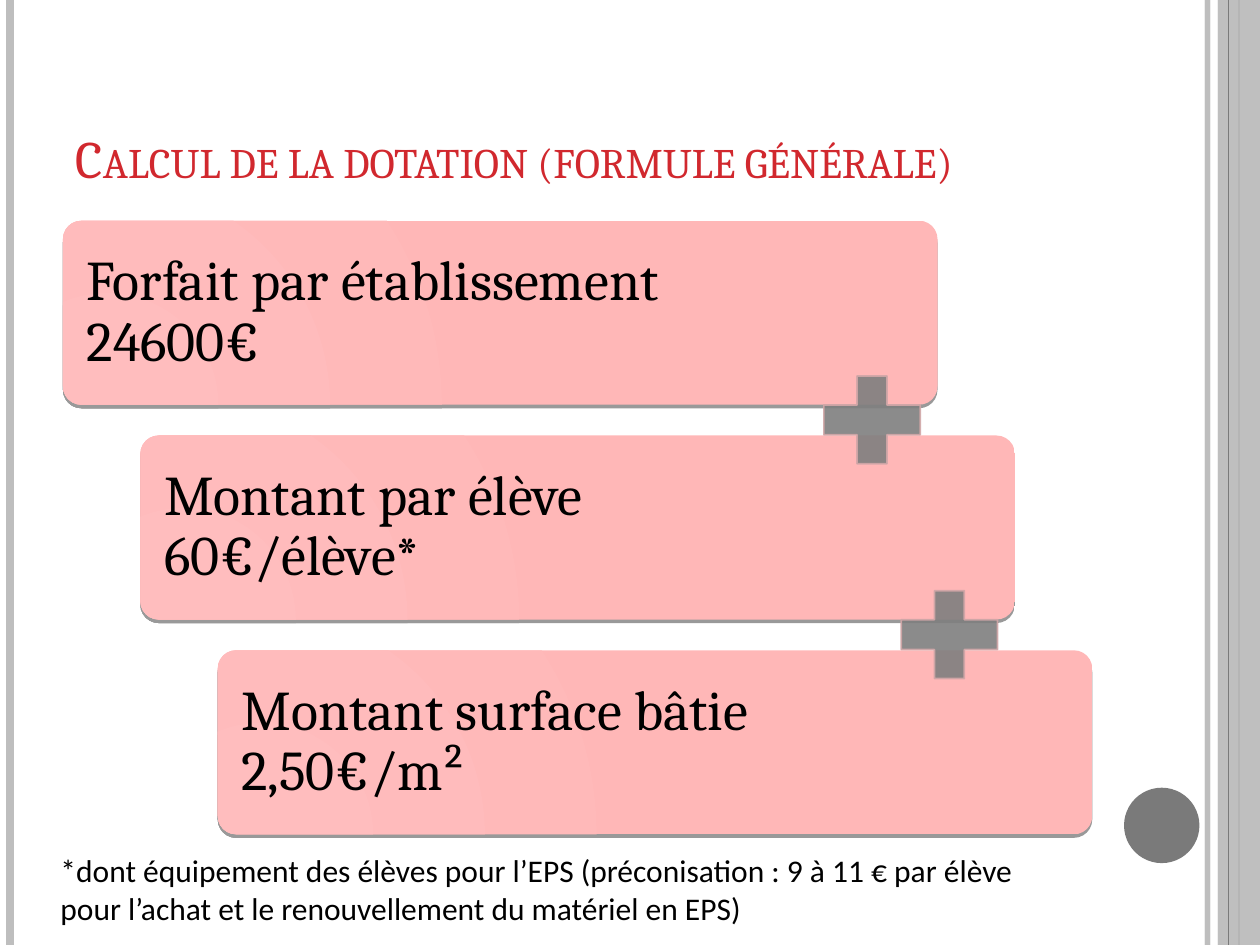
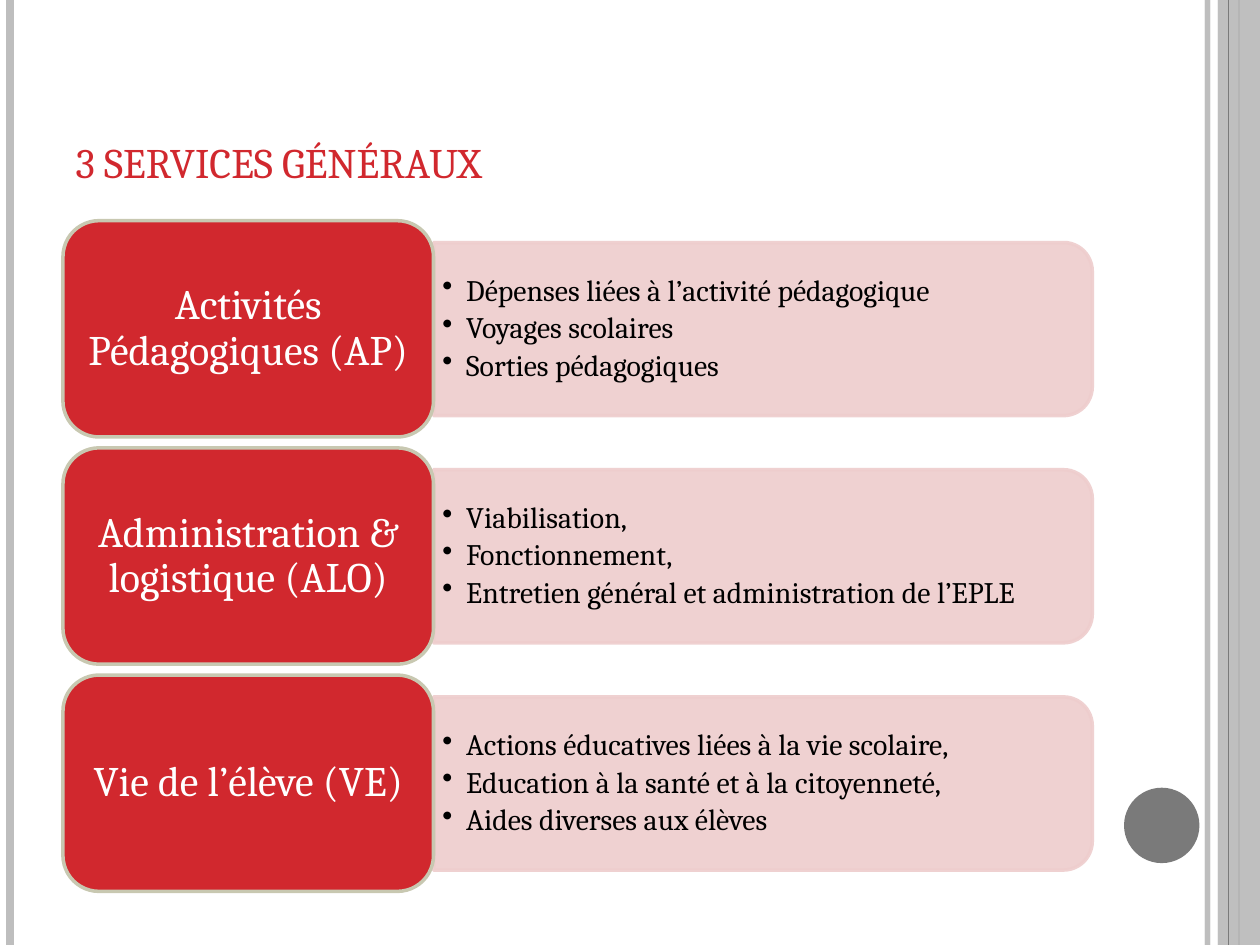
from dataclasses import dataclass
from math import cos, pi, sin

from lxml.etree import SubElement
from pptx import Presentation
from pptx.dml.color import RGBColor
from pptx.enum.shapes import MSO_CONNECTOR, MSO_SHAPE as Shape
from pptx.enum.text import MSO_ANCHOR as Anchor, MSO_AUTO_SIZE as AutoSize, PP_ALIGN as Align
from pptx.oxml.ns import qn
from pptx.util import Cm, Pt

RED = RGBColor(0xD1, 0x28, 0x2E)
PINK_LIGHT = RGBColor(0xFF, 0xBD, 0xBE)
PINK = RGBColor(0xFF, 0xB7, 0xB7)
ROSE = RGBColor(0xEE, 0xCD, 0xCD)
ROSE_DARK = RGBColor(0xD2, 0xA7, 0xA8)
SAND = RGBColor(0xC8, 0xC8, 0xB1)
SILVER = RGBColor(0xBE, 0xBE, 0xBE)
GREY = RGBColor(0x7A, 0x7A, 0x7A)
PLUS_GREY = RGBColor(0x7F, 0x7F, 0x7F)
BLACK = RGBColor(0, 0, 0)
WHITE = RGBColor(0xFF, 0xFF, 0xFF)

SERIF, SANS = "Cambria", "Calibri"
SLIDE_W, SLIDE_H = 25.4, 19.05
LEFT, TOP, CONTENT_W = 1.27, 4.45, 20.75


@dataclass(frozen=True)
class Box:
    """Position and size in centimetres."""
    x: float
    y: float
    w: float
    h: float

    def moved(self, dx: float, dy: float) -> "Box":
        return Box(self.x + dx, self.y + dy, self.w, self.h)

    def emu(self) -> tuple:
        return Cm(self.x), Cm(self.y), Cm(self.w), Cm(self.h)


@dataclass(frozen=True)
class Rail:
    x: float
    width: float
    color: RGBColor
    opacity: int = 100


@dataclass(frozen=True)
class Band:
    box: Box
    opacity: int


@dataclass(frozen=True)
class Style:
    size: float
    color: RGBColor = BLACK
    font: str = SERIF
    align: Align = Align.LEFT
    spacing: float = 1.0
    after: float = 0


@dataclass(frozen=True)
class Service:
    name: str
    items: tuple


EDGE_RAIL = Rail(24.34, 3, SILVER, 93)
EDGE_BAND = Band(Box(24.55, 0, 0.85, SLIDE_H), 87)
FRAME = (EDGE_RAIL, EDGE_BAND, EDGE_RAIL, Rail(0.21, 4.5, SILVER),
         Rail(24.98, 1.5, GREY), EDGE_BAND, Rail(24.77, 0.75, GREY))
DISC = Box(22.66, 15.88, 1.52, 1.52)

TITLE_BOX = Box(LEFT, 0.76, CONTENT_W, 3.18)
TITLE = Style(30, RED)
TERM = Style(32, spacing=0.9, after=15)
NOTE = Style(18, font=SANS)
CARD = Style(24, WHITE, align=Align.CENTER, spacing=0.9, after=10)
ITEM = Style(17, spacing=0.9, after=3)

TERM_BOX = Box(LEFT, TOP, 17.63, 3.71)
PLUS_BOX = Box(16.26, 7.26, 2.64, 2.41)
TERM_STEP = (1.56, 4.33)
NOTE_BOX = Box(0.97, 17.04, 21.06, 1.8)

CARD_BOX = Box(LEFT, TOP, 7.47, 4.36)
PANEL_BOX = Box(8.74, 4.89, 13.28, 3.49)
PANEL_RADIUS = 0.58
SERVICE_STEP = 4.58

TERMS = ("Forfait par établissement 24600€", "Montant par élève 60€/élève*",
         "Montant surface bâtie 2,50€/m²")
FOOTNOTE = ("*dont équipement des élèves pour l’EPS (préconisation : 9 à 11 € par élève "
            "pour l’achat et le renouvellement du matériel en EPS)")
SERVICES = (
    Service("Activités Pédagogiques (AP)",
            ("Dépenses liées à l’activité pédagogique", "Voyages scolaires",
             "Sorties pédagogiques")),
    Service("Administration & logistique (ALO)",
            ("Viabilisation,", "Fonctionnement,",
             "Entretien général et administration de l’EPLE")),
    Service("Vie de l’élève (VE)",
            ("Actions éducatives liées à la vie scolaire,",
             "Education à la santé et à la citoyenneté,", "Aides diverses aux élèves")),
)


def set_opacity(sp, percent: int) -> None:
    """Apply one opacity to the fill and the line."""
    if percent < 100:
        for color in list(sp.element.spPr.iter(qn("a:srgbClr"))):
            SubElement(color, qn("a:alpha"), val=str(percent * 1000))


def paint(sp, fill: RGBColor, line: RGBColor | None = None, width: float = 0,
          opacity: int = 100) -> None:
    sp.shadow.inherit = False
    sp.fill.solid()
    sp.fill.fore_color.rgb = fill
    if line is None:
        sp.line.fill.background()
    else:
        sp.line.color.rgb = line
        sp.line.width = Pt(width)
    set_opacity(sp, opacity)


def paint_glow(sp) -> None:
    """Radial pink gradient with a thin hard shadow below."""
    paint(sp, PINK)
    spPr = sp.element.spPr
    solid = spPr.find(qn("a:solidFill"))
    grad = solid.makeelement(qn("a:gradFill"), {"rotWithShape": "1"})
    stops = SubElement(grad, qn("a:gsLst"))
    for pos, color in ((0, PINK_LIGHT), (100, PINK)):
        stop = SubElement(stops, qn("a:gs"), pos=str(pos * 1000))
        SubElement(stop, qn("a:srgbClr"), val=str(color))
    circle = SubElement(grad, qn("a:path"), {"path": "circle"})
    SubElement(circle, qn("a:fillToRect"), l="5000", t="100000", r="95000", b="0")
    spPr.replace(solid, grad)
    shadow = SubElement(spPr.find(qn("a:effectLst")), qn("a:outerShdw"), blurRad="0",
                        dist=str(Pt(2)), dir="5400000", rotWithShape="0")
    color = SubElement(shadow, qn("a:srgbClr"), val=str(BLACK))
    SubElement(color, qn("a:alpha"), val="40000")


def set_insets(tf, left: float, top: float, right: float, bottom: float) -> None:
    tf.margin_left, tf.margin_top = Cm(left), Cm(top)
    tf.margin_right, tf.margin_bottom = Cm(right), Cm(bottom)


def add_bullet(p) -> None:
    pPr = p._p.get_or_add_pPr()
    pPr.set("marL", str(Cm(0.48)))
    pPr.set("indent", str(-Cm(0.48)))
    SubElement(pPr, qn("a:buChar"), char="•")


def write(tf, lines: tuple, style: Style, anchor: Anchor = Anchor.MIDDLE,
          bullets: bool = False) -> None:
    tf.word_wrap = True
    tf.vertical_anchor = anchor
    for i, line in enumerate(lines):
        p = tf.add_paragraph() if i else tf.paragraphs[0]
        p.alignment = style.align
        p.line_spacing = style.spacing
        p.space_before, p.space_after = Pt(0), Pt(style.after)
        if bullets:
            add_bullet(p)
        r = p.add_run()
        r.text = line
        r.font.name, r.font.size = style.font, Pt(style.size)
        r.font.color.rgb = style.color


def add_rail(slide, rail: Rail) -> None:
    x = Cm(rail.x)
    line = slide.shapes.add_connector(MSO_CONNECTOR.STRAIGHT, x, 0, x, Cm(SLIDE_H))
    line.line.color.rgb = rail.color
    line.line.width = Pt(rail.width)
    set_opacity(line, rail.opacity)
    SubElement(line.element.spPr, qn("a:effectLst"))


def add_framed_slide(prs, title: str):
    """Add a slide with the side rails, the disc and a small-caps title."""
    slide = prs.slides.add_slide(prs.slide_layouts[5])
    for part in FRAME:
        if isinstance(part, Rail):
            add_rail(slide, part)
        else:
            sp = slide.shapes.add_shape(Shape.RECTANGLE, *part.box.emu())
            paint(sp, SILVER, opacity=part.opacity)
    paint(slide.shapes.add_shape(Shape.OVAL, *DISC.emu()), GREY)

    sp = slide.shapes.title
    sp.left, sp.top, sp.width, sp.height = TITLE_BOX.emu()
    tf = sp.text_frame
    tf.auto_size = AutoSize.NONE
    write(tf, (title,), TITLE, Anchor.BOTTOM)
    tf.paragraphs[0].runs[0].font._element.set("cap", "small")
    return slide


def add_term(slide, box: Box, text: str) -> None:
    sp = slide.shapes.add_shape(Shape.ROUNDED_RECTANGLE, *box.emu())
    sp.adjustments[0] = 0.1
    paint_glow(sp)
    set_insets(sp.text_frame, 0.37, 0.37, 4.52, 0.37)
    write(sp.text_frame, (text,), TERM)


def add_plus(slide, box: Box) -> None:
    sp = slide.shapes.add_shape(Shape.MATH_PLUS, *box.emu())
    sp.adjustments[0] = 0.25
    paint(sp, PLUS_GREY, ROSE_DARK, 1, 90)


def add_panel(slide, box: Box, items: tuple) -> None:
    """Bulleted panel, rounded on its right side only."""
    right, bottom, rad = box.x + box.w, box.y + box.h, PANEL_RADIUS
    turns = [i * pi / 24 for i in range(13)]
    points = [(right - rad + rad * sin(a), box.y + rad - rad * cos(a)) for a in turns]
    points += [(right - rad + rad * cos(a), bottom - rad + rad * sin(a)) for a in turns]
    points.append((box.x, bottom))
    outline = slide.shapes.build_freeform(Cm(box.x), Cm(box.y))
    outline.add_line_segments([(Cm(x), Cm(y)) for x, y in points], close=True)
    sp = outline.convert_to_shape()
    paint(sp, ROSE, ROSE, 2, 90)
    set_insets(sp.text_frame, 0.18, 0.25, 0.36, 0.25)
    write(sp.text_frame, items, ITEM, bullets=True)


def add_card(slide, box: Box, name: str) -> None:
    sp = slide.shapes.add_shape(Shape.ROUNDED_RECTANGLE, *box.emu())
    paint(sp, RED, SAND, 2)
    set_insets(sp.text_frame, 0.24, 0.12, 0.24, 0.12)
    write(sp.text_frame, (name,), CARD)


def build_formula(prs) -> None:
    slide = add_framed_slide(prs, "Calcul de la dotation (formule générale)")
    dx, dy = TERM_STEP
    for i, text in enumerate(TERMS):
        add_term(slide, TERM_BOX.moved(i * dx, i * dy), text)
    for i in range(len(TERMS) - 1):
        add_plus(slide, PLUS_BOX.moved(i * dx, i * dy))
    tf = slide.shapes.add_textbox(*NOTE_BOX.emu()).text_frame
    tf.auto_size = AutoSize.SHAPE_TO_FIT_TEXT
    write(tf, (FOOTNOTE,), NOTE, Anchor.TOP)


def build_services(prs) -> None:
    slide = add_framed_slide(prs, "3 services généraux")
    for i, service in enumerate(SERVICES):
        dy = i * SERVICE_STEP
        add_panel(slide, PANEL_BOX.moved(0, dy), service.items)
        add_card(slide, CARD_BOX.moved(0, dy), service.name)


def main() -> None:
    prs = Presentation()
    prs.slide_width, prs.slide_height = Cm(SLIDE_W), Cm(SLIDE_H)
    build_formula(prs)
    build_services(prs)
    prs.save("out.pptx")


if __name__ == "__main__":
    main()
